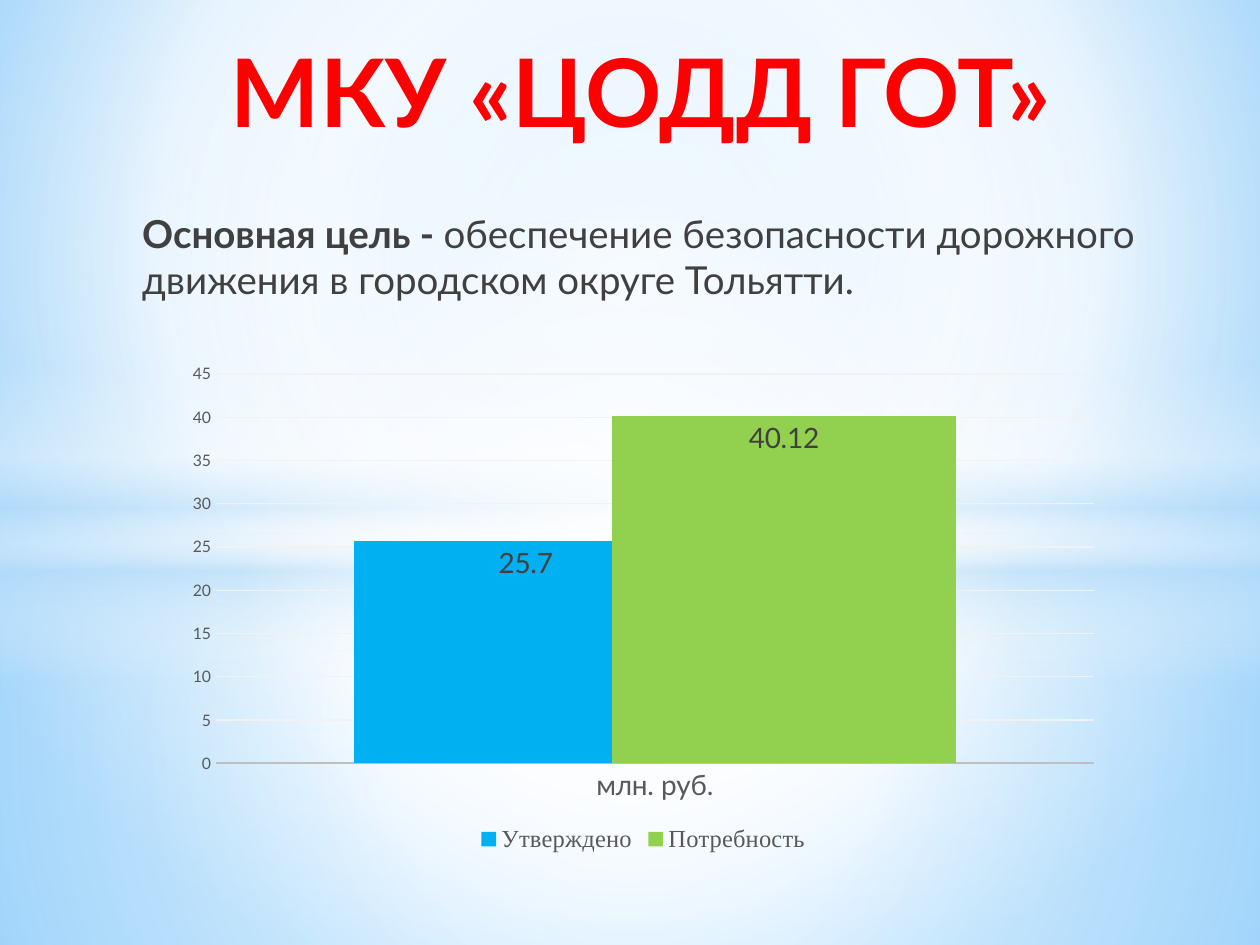
from dataclasses import dataclass

from lxml.etree import SubElement
from pptx import Presentation
from pptx.chart.data import CategoryChartData
from pptx.dml.color import RGBColor
from pptx.enum.chart import (
    XL_CHART_TYPE as ChartType,
    XL_LABEL_POSITION as LabelPosition,
    XL_LEGEND_POSITION as LegendPosition,
    XL_TICK_MARK as TickMark,
)
from pptx.enum.shapes import MSO_SHAPE as Preset
from pptx.enum.text import MSO_ANCHOR as Anchor, MSO_AUTO_SIZE as AutoSize, PP_ALIGN as Align
from pptx.oxml.ns import qn
from pptx.util import Pt

WHITE = RGBColor(0xFF, 0xFF, 0xFF)
MIST = RGBColor(0xB4, 0xDC, 0xFA)
SKY = RGBColor(0x9E, 0xD5, 0xFF)
AZURE = RGBColor(0x5B, 0xB9, 0xFF)
RED = RGBColor(0xFF, 0x00, 0x00)
BLUE = RGBColor(0x00, 0xB0, 0xF0)
GREEN = RGBColor(0x92, 0xD0, 0x50)
DARK = RGBColor(0x40, 0x40, 0x40)
GREY = RGBColor(0x59, 0x59, 0x59)
AXIS = RGBColor(0xBF, 0xBF, 0xBF)
GRID = RGBColor(0xF2, 0xF2, 0xF2)
SANS, SERIF = "Lato", "Times New Roman"
CENTRE = (50, 50, 50, 50)


@dataclass(frozen=True)
class Stop:
    percent: int
    color: RGBColor
    opacity: int = 100


@dataclass(frozen=True)
class Glow:
    preset: Preset
    box: tuple[float, float, float, float]
    stops: tuple[Stop, ...]
    focus: tuple[int, ...] | None = CENTRE  # None: top to bottom


@dataclass(frozen=True)
class Budget:
    name: str
    amount: float
    color: RGBColor


GLOWS = (
    Glow(Preset.RECTANGLE, (0, 304.5, 720, 235.5),
         (Stop(0, WHITE, 91), Stop(37, WHITE, 76), Stop(100, MIST, 79))),
    Glow(Preset.RECTANGLE, (0, 0, 720, 304.5),
         (Stop(0, WHITE, 89), Stop(48, WHITE, 62), Stop(100, MIST, 79))),
    Glow(Preset.RECTANGLE, (0, 209, 720, 180),
         (Stop(0, WHITE, 0), Stop(29, WHITE, 30), Stop(45, MIST, 40),
          Stop(55, WHITE, 26), Stop(65, MIST, 60), Stop(100, WHITE, 0)), None),
    Glow(Preset.OVAL, (0, 126, 720, 402), (Stop(0, WHITE), Stop(54, WHITE, 0))),
)
BUDGETS = (Budget("Утверждено", 25.7, BLUE), Budget("Потребность", 40.12, GREEN))


def paint_gradient(fill, owner, stops: tuple[Stop, ...], focus) -> None:
    """Fill with a circular gradient around focus, or a vertical one."""
    fill.gradient()
    gradient = owner.find(qn("a:gradFill"))
    gradient.clear()
    stop_list = SubElement(gradient, qn("a:gsLst"))
    for stop in stops:
        mark = SubElement(stop_list, qn("a:gs"), pos=str(stop.percent * 1000))
        color = SubElement(mark, qn("a:srgbClr"), val=str(stop.color))
        if stop.opacity < 100:
            SubElement(color, qn("a:alpha"), val=str(stop.opacity * 1000))
    if focus is None:
        SubElement(gradient, qn("a:lin"), ang="5400000", scaled="0")
    else:
        circle = SubElement(gradient, qn("a:path"), path="circle")
        edges = {side: str(value * 1000) for side, value in zip("ltrb", focus)}
        SubElement(circle, qn("a:fillToRect"), **edges)


def draw_glow(slide, glow: Glow) -> None:
    shape = slide.shapes.add_shape(glow.preset, *map(Pt, glow.box))
    shape.shadow.inherit = False
    shape.line.fill.background()
    paint_gradient(shape.fill, shape._element.spPr, glow.stops, glow.focus)


def style_font(font, size: float, color: RGBColor, name: str = SANS, bold: bool = False) -> None:
    font.size, font.name, font.bold = Pt(size), name, bold
    font.color.rgb = color


def add_run(paragraph, text: str, size: float, color: RGBColor, bold: bool) -> None:
    run = paragraph.add_run()
    run.text = text
    style_font(run.font, size, color, bold=bold)


def indent(paragraph, left: float) -> None:
    properties = paragraph._p.get_or_add_pPr()
    properties.set("marL", str(Pt(left)))
    properties.set("indent", "0")


def draw_title(slide) -> None:
    title = slide.shapes.title
    title.left, title.top, title.width, title.height = map(Pt, (88, 15, 542, 85))
    slide.shapes._spTree.append(title._element)  # in front of the glows
    frame = title.text_frame
    frame.auto_size, frame.vertical_anchor = AutoSize.NONE, Anchor.TOP
    heading = frame.paragraphs[0]
    heading.alignment = Align.CENTER
    indent(heading, 14.4)
    add_run(heading, "МКУ «ЦОДД ГОТ»", 54, RED, True)


def draw_chart(slide) -> None:
    data = CategoryChartData()
    data.categories = ["млн. руб."]
    for budget in BUDGETS:
        data.add_series(budget.name, [budget.amount])
    chart = slide.shapes.add_chart(
        ChartType.COLUMN_CLUSTERED, *map(Pt, (99.4, 202.3, 536.4, 288)), data).chart
    style_font(chart.font, 10, GREY)
    chart.has_title = False

    # Legend
    chart.has_legend = True
    chart.legend.position = LegendPosition.BOTTOM
    chart.legend.include_in_layout = False
    style_font(chart.legend.font, 14, GREY, SERIF)

    # Axes
    for axis, size in ((chart.category_axis, 16), (chart.value_axis, 9)):
        axis.major_tick_mark = axis.minor_tick_mark = TickMark.NONE
        style_font(axis.tick_labels.font, size, GREY)
    base_line = chart.category_axis.format.line
    base_line.color.rgb, base_line.width = AXIS, Pt(1.25)
    chart.value_axis.format.line.fill.background()
    grid_line = chart.value_axis.major_gridlines.format.line
    grid_line.color.rgb, grid_line.width = GRID, Pt(0.75)

    # Columns
    plot = chart.plots[0]
    plot.gap_width, plot.overlap, plot.vary_by_categories = 80, 25, False
    for series, budget in zip(plot.series, BUDGETS):
        series.format.fill.solid()
        series.format.fill.fore_color.rgb = budget.color
        labels = series.data_labels
        labels.show_value = True
        labels.position = LabelPosition.INSIDE_END
        style_font(labels.font, 16, DARK)


def draw_goal(slide) -> None:
    frame = slide.shapes.add_textbox(*map(Pt, (70.6, 116.6, 601, 67.7))).text_frame
    frame.word_wrap = True
    goal = frame.paragraphs[0]
    indent(goal, 3.6)
    goal.space_before, goal.space_after = Pt(4.4), Pt(3)
    add_run(goal, "Основная цель - ", 22, DARK, True)
    add_run(goal, "обеспечение безопасности дорожного движения "
                  "в городском округе Тольятти.", 22, DARK, False)


def main() -> None:
    deck = Presentation()
    deck.slide_width, deck.slide_height = Pt(720), Pt(540)
    slide = deck.slides.add_slide(deck.slide_layouts[5])

    # Backdrop
    backdrop = slide.background.fill
    backdrop.solid()
    paint_gradient(backdrop, slide._element.find(".//" + qn("p:bgPr")),
                   (Stop(0, SKY), Stop(60, WHITE), Stop(100, AZURE)), (20, 10, 20, 60))
    for glow in GLOWS:
        draw_glow(slide, glow)

    # Content
    draw_title(slide)
    draw_chart(slide)
    draw_goal(slide)
    deck.save("out.pptx")


if __name__ == "__main__":
    main()
